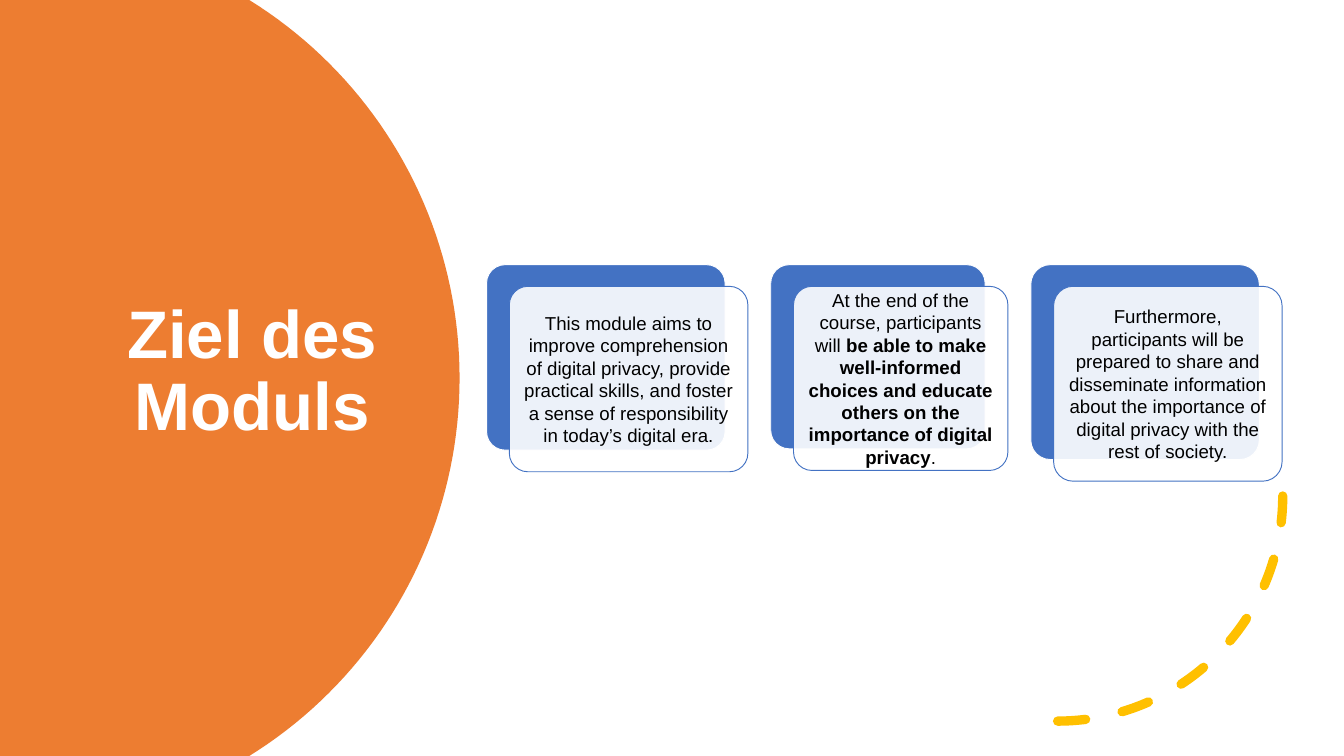
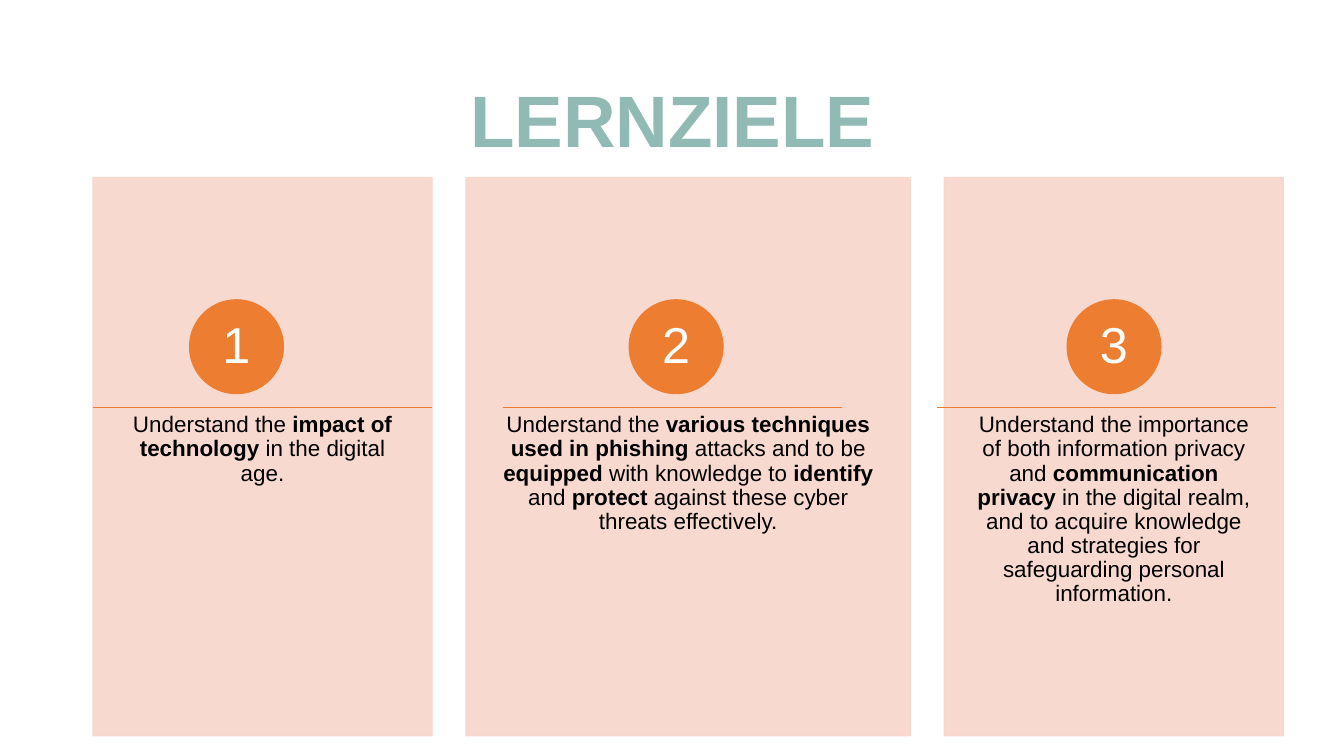
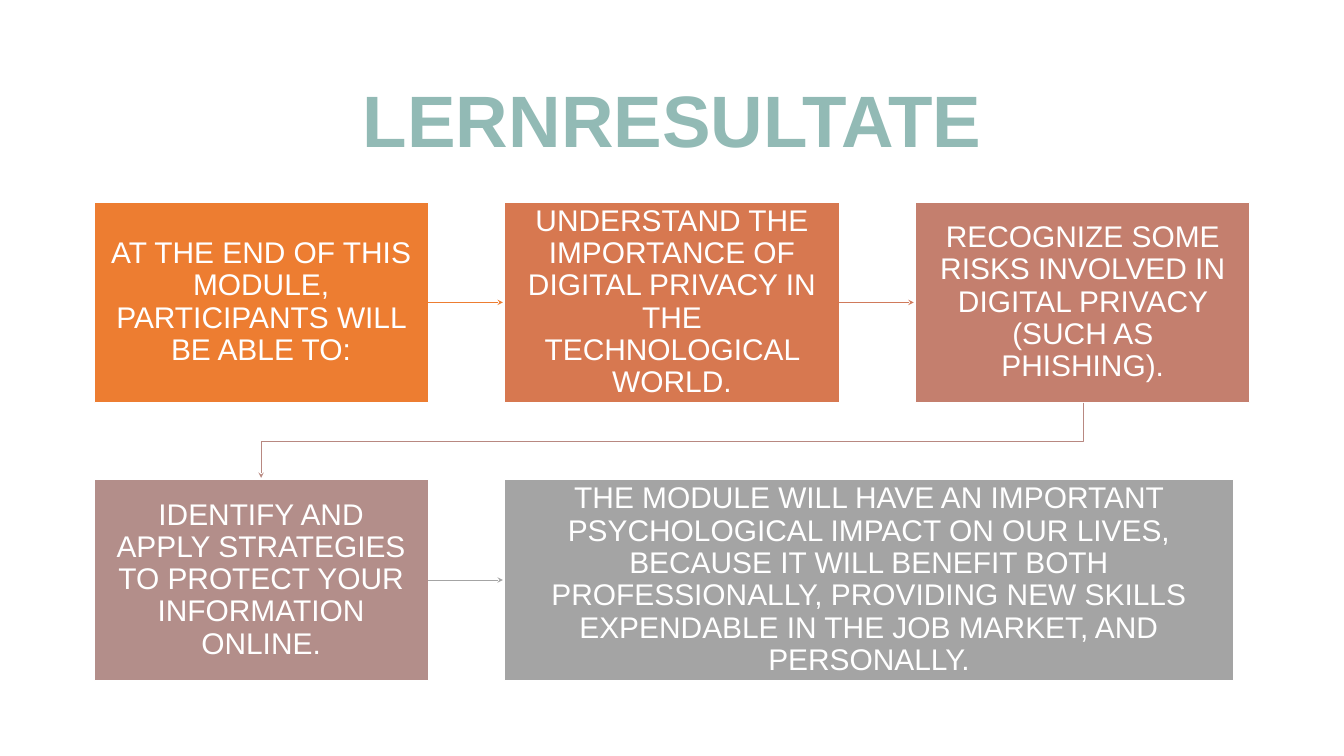
import math
import lxml.etree
import pptx
import pptx.dml.color
import pptx.enum.dml
import pptx.enum.shapes
import pptx.enum.text
import pptx.oxml.ns
import pptx.util

Pt = pptx.util.Pt
qn = pptx.oxml.ns.qn
Kind = pptx.enum.shapes.MSO_SHAPE

FONT = "Arial"
WHITE, BLACK = "FFFFFF", "000000"
ORANGE, BLUE, GOLD = "ED7D31", "4372C3", "FFC000"
TEAL, ROSE, GREY = "92BAB5", "F7D5CB", "A4A4A4"


def color(code):
    return pptx.dml.color.RGBColor.from_string(code)


def write(frame, text, size=20, ink=BLACK, bold=False, space=None,
          inset=(0, 0, 0, 0), anchor="MIDDLE"):
    """Fill a frame with centred text; parts between bars are bold."""
    frame.word_wrap = True
    frame.auto_size = pptx.enum.text.MSO_AUTO_SIZE.NONE
    frame.vertical_anchor = getattr(pptx.enum.text.MSO_ANCHOR, anchor)
    frame.margin_left, frame.margin_top, frame.margin_right, frame.margin_bottom = map(Pt, inset)
    para = frame.paragraphs[0]
    para.alignment = pptx.enum.text.PP_ALIGN.CENTER
    para.line_spacing = space
    for index, part in enumerate(text.split("|")):
        run = para.add_run()
        run.text = part
        run.font.name = FONT
        run.font.size = Pt(size)
        run.font.bold = bold or index % 2 == 1
        run.font.color.rgb = color(ink)


class Deck:
    def __init__(self, width, height):
        self.show = pptx.Presentation()
        self.show.slide_width, self.show.slide_height = Pt(width), Pt(height)
        self.slide = None

    def page(self):
        self.slide = self.show.slides.add_slide(self.show.slide_layouts[5])

    def title(self, text, box=(99.4, 65.5, 1242, 134), size=78, ink=TEAL):
        title = self.slide.shapes.title
        title.left, title.top, title.width, title.height = map(Pt, box)
        title.element.getparent().append(title.element)
        write(title.text_frame, text, size=size, ink=ink, bold=True, space=0.9,
              inset=(7.2, 3.6, 7.2, 3.6))

    def style(self, shape, fill=None, line=None, weight=1, alpha=None):
        shape.shadow.inherit = False
        if fill:
            shape.fill.solid()
            shape.fill.fore_color.rgb = color(fill)
        else:
            shape.fill.background()
        if line:
            shape.line.color.rgb = color(line)
            shape.line.width = Pt(weight)
        else:
            shape.line.fill.background()
        if alpha:
            for tint in shape.element.spPr.iter(qn("a:srgbClr")):
                if tint.get("val") == fill:
                    lxml.etree.SubElement(tint, qn("a:alpha"), val=str(alpha * 1000))

    def shape(self, kind, box, **look):
        shape = self.slide.shapes.add_shape(kind, *map(Pt, box))
        self.style(shape, **look)
        return shape

    def outline(self, points, close=True, **look):
        start, *rest = [(Pt(x), Pt(y)) for x, y in points]
        build = self.slide.shapes.build_freeform(*start)
        build.add_line_segments(rest, close=close)
        shape = build.convert_to_shape()
        self.style(shape, **look)
        return shape

    def line(self, start, end, ink, weight=1):
        line = self.slide.shapes.add_connector(
            pptx.enum.shapes.MSO_CONNECTOR.STRAIGHT, *map(Pt, start + end))
        line.line.color.rgb = color(ink)
        line.line.width = Pt(weight)
        lxml.etree.SubElement(line.element.spPr, qn("a:effectLst"))
        return line

    def arrow(self, line):
        edge = line.element.spPr.find(qn("a:ln"))
        lxml.etree.SubElement(edge, qn("a:tailEnd"), type="stealth")

    def arc(self, box, ink, weight):
        arc = self.shape(Kind.ARC, box, line=ink, weight=weight)
        arc.line.dash_style = pptx.enum.dml.MSO_LINE.DASH
        arc.rotation = 180
        arc.element.spPr.find(qn("a:xfrm")).set("flipH", "1")
        arc.element.spPr.find(qn("a:ln")).set("cap", "rnd")

    def card(self, left, width, height, text):
        for shift, look in ((0, dict(fill=BLUE, line=WHITE)),
                            (1, dict(fill=WHITE, line=BLUE, alpha=90))):
            box = left + 24.4 * shift, 283.6 + 23.2 * shift, width, height
            card = self.shape(Kind.ROUNDED_RECTANGLE, box, **look)
            card.adjustments[0] = 0.1
        write(card.text_frame, text, inset=(5.8,) * 4)

    def panel(self, left, width, text):
        panel = self.shape(Kind.RECTANGLE, (left, 190.1, width, 598.3),
                           fill=ROSE, line=ROSE, alpha=90)
        write(panel.text_frame, text, size=24, space=0.9, anchor="TOP",
              inset=(28, 252.7, 28, 26))

    def badge(self, left, text):
        badge = self.shape(Kind.OVAL, (left, 321.1, 100.8, 100.8), fill=ORANGE, line=ORANGE)
        write(badge.text_frame, text, size=54, ink=WHITE, space=0.9,
              inset=(7.9, 0.7, 7.9, 0.7))

    def step(self, box, fill, text):
        step = self.shape(Kind.RECTANGLE, box, fill=fill, line=WHITE)
        write(step.text_frame, text, size=32, ink=WHITE, space=0.9,
              inset=(17.3, 18.7, 17.3, 18.7))


def goal(deck):
    deck.page()
    radius, mid, steps = 476.6, 405, 80
    reach = math.asin(mid / radius)
    angles = [reach * (2 * i / steps - 1) for i in range(steps + 1)]
    curve = [(15.8 + radius * math.cos(a), mid + radius * math.sin(a)) for a in angles]
    deck.outline([(0, 0), *curve, (0, 2 * mid)], fill=ORANGE)
    deck.title("Ziel des Moduls", box=(81.4, 136, 378, 527), size=72, ink=WHITE)
    deck.arc((892, 290.2, 482.4, 482.4), GOLD, 10)
    deck.card(521.3, 255.6, 198.7,
              "This module aims to improve comprehension of digital privacy, provide practical "
              "skills, and foster a sense of responsibility in today’s digital era.")
    deck.card(825.8, 229.7, 197.3,
              "At the end of the course, participants will |be able to make well-informed choices "
              "and educate others on the importance of digital privacy|.")
    deck.card(1104.5, 244.8, 208.8,
              "Furthermore, participants will be prepared to share and disseminate information "
              "about the importance of digital privacy with the rest of society.")


def aims(deck):
    deck.page()
    deck.title("LERNZIELE")
    narrow, left = 363.6, 99.4
    items = (
        (narrow, 203, 99.4, "Understand the |impact of technology |in the digital age."),
        (476.6, 674, 538.6,
         "Understand the |various techniques used in phishing |attacks and to be |equipped| with "
         "knowledge to |identify |and |protect |against these cyber threats effectively."),
        (narrow, 1143.2, 1003.7,
         "Understand the importance of both information privacy and |communication privacy |in the "
         "digital realm, and to acquire knowledge and strategies for safeguarding personal "
         "information."),
    )
    for number, (width, spot, rule, text) in enumerate(items, 1):
        deck.panel(left, width, text)
        deck.badge(spot, str(number))
        deck.line((rule, 436.3), (rule + narrow, 436.3), ORANGE)
        left += width + 36


def results(deck):
    deck.page()
    deck.title("LERNRESULTATE")
    left, top, wide, high = 100.8, 216.7, 358, 214.6
    across, down = 440.2, 297.4
    items = (
        (0, 0, wide, ORANGE, ORANGE, "AT THE END OF THIS MODULE, PARTICIPANTS WILL BE ABLE TO:"),
        (1, 0, wide, "D77850", "D07A5B",
         "UNDERSTAND THE IMPORTANCE OF DIGITAL PRIVACY IN THE TECHNOLOGICAL WORLD."),
        (2, 0, wide, "C47F6E", None,
         "RECOGNIZE SOME RISKS INVOLVED IN DIGITAL PRIVACY (SUCH AS PHISHING)."),
        (0, 1, wide, "B38E8A", GREY,
         "IDENTIFY AND APPLY STRATEGIES TO PROTECT YOUR INFORMATION ONLINE."),
        (1, 1, 780.5, GREY, None,
         "THE MODULE WILL HAVE AN IMPORTANT PSYCHOLOGICAL IMPACT ON OUR LIVES, BECAUSE IT WILL "
         "BENEFIT BOTH PROFESSIONALLY, PROVIDING NEW SKILLS EXPENDABLE IN THE JOB MARKET, AND "
         "PERSONALLY."),
    )
    for col, row, width, fill, link, text in items:
        x, y = left + col * across, top + row * down
        deck.step((x, y, width, high), fill, text)
        if link:
            mid = y + high / 2
            deck.arrow(deck.line((x + wide, mid), (x + wide + 80, mid), link, 0.75))
    first, last = left + wide / 2, left + 2 * across + wide / 2
    turn = top + (high + down) / 2
    bend = [(last, top + high), (last, turn), (first, turn), (first, top + down - 2)]
    deck.arrow(deck.outline(bend, close=False, line="B88881", weight=0.75))


def main():
    deck = Deck(1440, 810)
    for build in (goal, aims, results):
        build(deck)
    deck.show.save("out.pptx")


if __name__ == "__main__":
    main()
